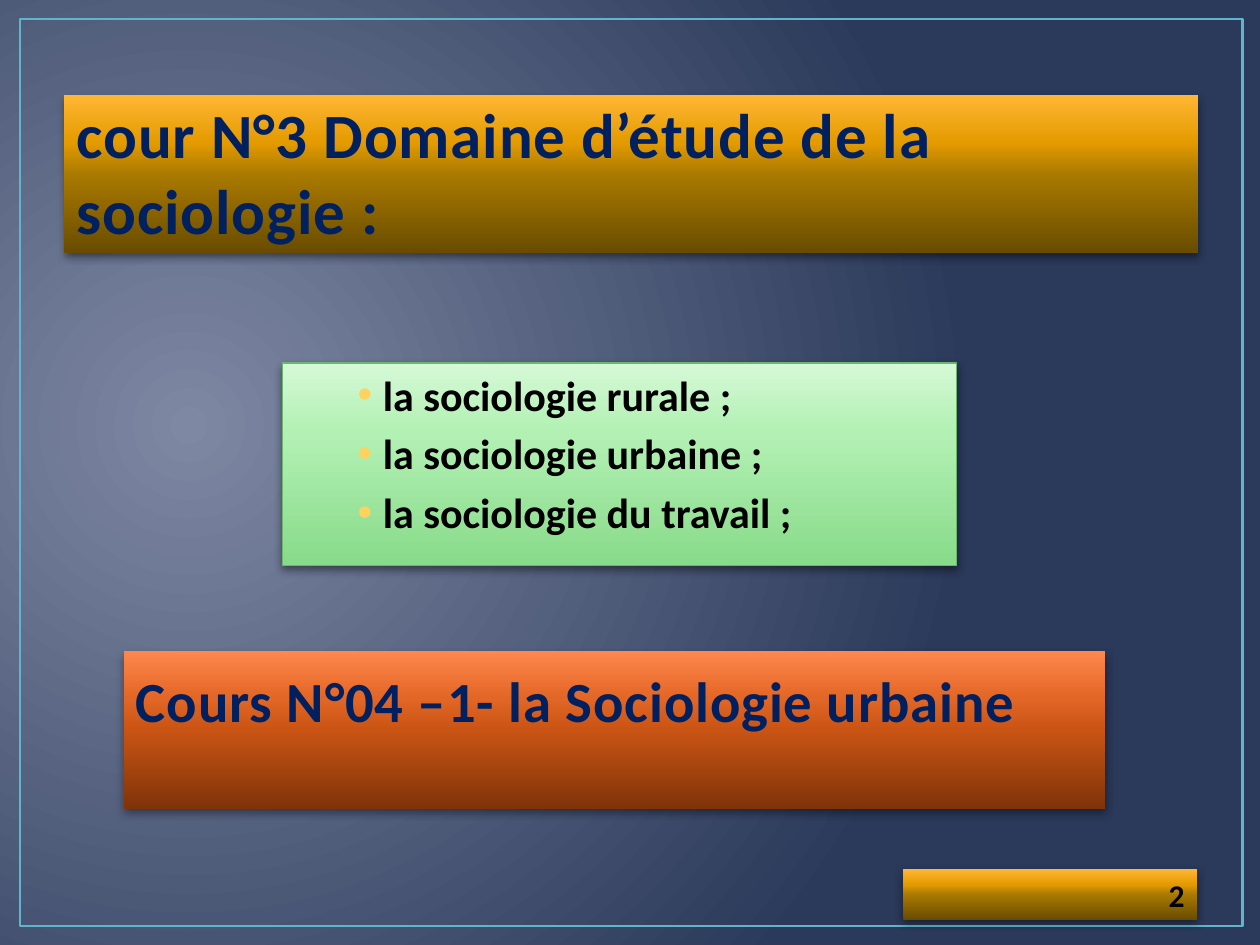
import pptx
import pptx.util
import pptx.dml.color
import pptx.enum.shapes
import pptx.enum.text
import pptx.oxml
import pptx.oxml.ns
from lxml import etree

Pt = pptx.util.Pt
ANCHOR = pptx.enum.text.MSO_ANCHOR
ALIGN = pptx.enum.text.PP_ALIGN
RECT = pptx.enum.shapes.MSO_SHAPE.RECTANGLE
qn = pptx.oxml.ns.qn
NS = pptx.oxml.ns.nsdecls("a")


def rgb(color):
    return pptx.dml.color.RGBColor.from_string(color)


def set_gradient(owner, stops, direction):
    """Fill owner with (percent, colour) stops; direction is the a:lin or a:path element."""
    owner.fill.gradient()
    grad = owner.fill._xPr.find(qn("a:gradFill"))
    for child in list(grad):
        grad.remove(child)
    gs = "".join(f'<a:gs pos="{pos * 1000}"><a:srgbClr val="{color}"/></a:gs>'
                 for pos, color in stops)
    grad.append(pptx.oxml.parse_xml(f"<a:gsLst {NS}>{gs}</a:gsLst>"))
    grad.append(pptx.oxml.parse_xml(direction))


UPWARD = f'<a:lin {NS} ang="16200000" scaled="0"/>'
CIRCLE = (f'<a:path {NS} path="circle">'
          '<a:fillToRect l="15000" t="50000" r="85000" b="60000"/></a:path>')
SHADOW = (f'<a:outerShdw {NS} blurRad="{Pt(5)}" dist="{Pt(2)}" dir="5400000" rotWithShape="0">'
          '<a:srgbClr val="000000"><a:alpha val="43000"/></a:srgbClr></a:outerShdw>')
GOLD = [(0, "694C00"), (50, "AA7A00"), (70, "E49B00"), (100, "FFB634")]
GREEN = [(0, "88DB8A"), (65, "B2F0B3"), (100, "D5F9D6")]
ORANGE = [(0, "803309"), (50, "C95414"), (70, "E26625"), (100, "FF874D")]

prs = pptx.Presentation()
prs.slide_width, prs.slide_height = Pt(720), Pt(540)
s = prs.slides.add_slide(prs.slide_layouts[6])
set_gradient(s.background, [(0, "7E88A3"), (100, "2B395A")], CIRCLE)

frame = s.shapes.add_shape(RECT, Pt(11.5), Pt(10.8), Pt(698.4), Pt(518.4))
frame.shadow.inherit = False
frame.fill.background()
frame.line.color.rgb = rgb("60B5CC")
frame.line.width = Pt(1.5)

panels = [
    dict(at=(36.7, 54.5, 648, 90), grad=GOLD, size=36, color="002060", spc=50,
         lines=["cour N°3 Domaine d’étude de la sociologie :"]),
    dict(at=(161.3, 207.4, 385.2, 115.9), grad=GREEN, size=24, color="000000", spc=0,
         lines=["la sociologie rurale ;", "la sociologie urbaine ;",
                "la sociologie du travail ;"],
         line="6BB76D", bullet="FFD25D", anchor=ANCHOR.TOP),
    dict(at=(516.2, 496.8, 167.8, 28.8), grad=GOLD, size=18, color="000000", spc=50,
         lines=["2"], align=ALIGN.RIGHT),
    dict(at=(70.6, 372.2, 560.9, 90), grad=ORANGE, size=32.4, color="002060", spc=50,
         lines=["Cours N°04 –1- la Sociologie urbaine"], bottom=43),
]

for panel in panels:
    sp = s.shapes.add_shape(RECT, *map(Pt, panel["at"]))
    sp.shadow.inherit = False
    sp._element.spPr.find(qn("a:effectLst")).append(pptx.oxml.parse_xml(SHADOW))
    set_gradient(sp, panel["grad"], UPWARD)
    if "line" in panel:
        sp.line.color.rgb = rgb(panel["line"])
        sp.line.width = Pt(0.75)
    else:
        sp.line.fill.background()

    tf = sp.text_frame
    frame_format = dict(word_wrap=True, vertical_anchor=panel.get("anchor", ANCHOR.BOTTOM),
                        margin_bottom=Pt(panel.get("bottom", 3.6)))
    for name, value in frame_format.items():
        setattr(tf, name, value)

    for i, text in enumerate(panel["lines"]):
        p = tf.paragraphs[0] if i == 0 else tf.add_paragraph()
        p.alignment = panel.get("align", ALIGN.LEFT)
        if i:
            p.space_before = Pt(4.8)
        if "bullet" in panel:
            pPr = p._p.get_or_add_pPr()
            pPr.set("marL", str(Pt(50.4)))
            pPr.set("indent", str(Pt(-14.4)))
            color = etree.SubElement(pPr, qn("a:buClr"))
            etree.SubElement(color, qn("a:srgbClr"), val=panel["bullet"])
            etree.SubElement(pPr, qn("a:buFont"), typeface="Arial")
            etree.SubElement(pPr, qn("a:buChar"), char="•")
        r = p.add_run()
        r.text = text
        for name, value in dict(name="Calibri", size=Pt(panel["size"]), bold=True).items():
            setattr(r.font, name, value)
        r.font.color.rgb = rgb(panel["color"])
        r._r.get_or_add_rPr().set("spc", str(panel["spc"]))

prs.save("out.pptx")
